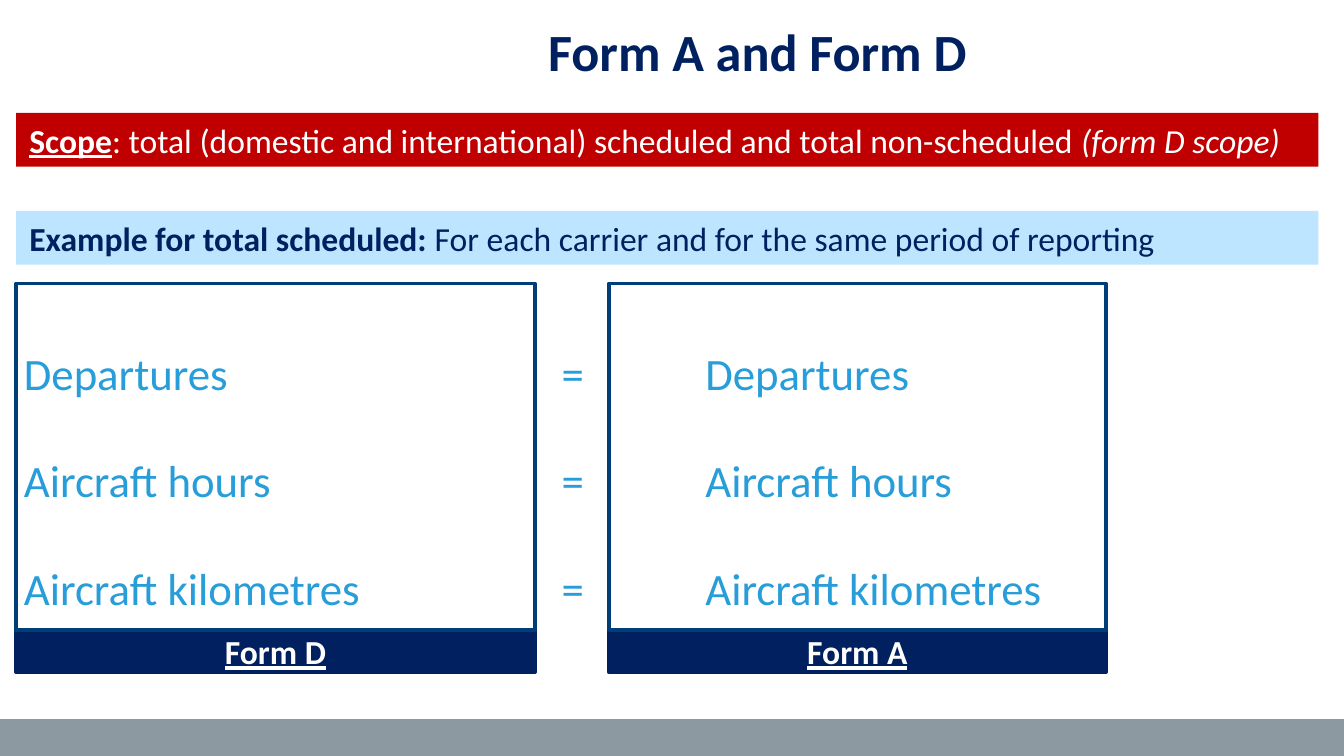
import dataclasses
import typing

import lxml.etree
import pptx
import pptx.dml.color
import pptx.enum.shapes
import pptx.enum.text
import pptx.oxml.ns
import pptx.util

Inches = pptx.util.Inches
Pt = pptx.util.Pt
ALIGN = pptx.enum.text.PP_ALIGN
ANCHOR = pptx.enum.text.MSO_ANCHOR
COLOURS = {
    "navy": "002060",
    "red": "C00000",
    "pale": "BEE5FF",
    "sky": "279DD9",
    "frame": "003E79",
    "grey": "8C99A1",
    "white": "FFFFFF",
}
HEADING = {"bold": True, "underline": True}


@dataclasses.dataclass
class Box:
    left: float
    top: float
    width: float
    height: float
    fill: typing.Optional[str] = None
    line: typing.Optional[str] = None
    line_width: float = 0


@dataclasses.dataclass
class Phrase:
    text: str
    style: dict = dataclasses.field(default_factory=dict)


@dataclasses.dataclass
class Form:
    name: str
    left: float
    width: float


def colour(name: str) -> pptx.dml.color.RGBColor:
    return pptx.dml.color.RGBColor.from_string(COLOURS[name])


def place(box: Box) -> tuple:
    return tuple(Inches(n) for n in (box.left, box.top, box.width, box.height))


def draw_box(slide, box: Box):
    rectangle = slide.shapes.add_shape(
        pptx.enum.shapes.MSO_SHAPE.RECTANGLE, *place(box))
    rectangle.shadow.inherit = False
    if box.fill:
        rectangle.fill.solid()
        rectangle.fill.fore_color.rgb = colour(box.fill)
    else:
        rectangle.fill.background()
    if box.line:
        rectangle.line.color.rgb = colour(box.line)
        rectangle.line.width = Pt(box.line_width)
    else:
        rectangle.line.fill.background()
    return rectangle


def write(paragraph, phrases: list, size: float, ink: str) -> None:
    for phrase in phrases:
        run = paragraph.add_run()
        run.text = phrase.text
        style = {"name": "Calibri", "size": Pt(size), **phrase.style}
        for attribute, value in style.items():
            setattr(run.font, attribute, value)
        run.font.color.rgb = colour(ink)


def set_frame(shape, anchor):
    frame = shape.text_frame
    frame.word_wrap = True
    frame.vertical_anchor = anchor
    return frame


def add_tabs(paragraph, stops: list) -> None:
    qn = pptx.oxml.ns.qn
    tab_list = lxml.etree.SubElement(
        paragraph._p.get_or_add_pPr(), qn("a:tabLst"))
    for stop in stops:
        lxml.etree.SubElement(
            tab_list, qn("a:tab"), pos=str(Inches(stop)), algn="l")


def draw_measures(slide, measures: list) -> None:
    box = Box(0.08, 2.12, 9.72, 3.33)
    frame = set_frame(slide.shapes.add_textbox(*place(box)), ANCHOR.TOP)
    for index, measure in enumerate(measures):
        paragraph = frame.add_paragraph() if index else frame.paragraphs[0]
        add_tabs(paragraph, [4, 5.07])
        paragraph.line_spacing = 2.0
        write(paragraph, [Phrase(f"{measure}\t=\t{measure}")], 24, "sky")


def draw_banner(slide, top: float, fill: str, ink: str, phrases: list) -> None:
    banner = draw_box(slide, Box(0.12, top, 9.69, 0.4, fill))
    paragraph = set_frame(banner, ANCHOR.TOP).paragraphs[0]
    paragraph.alignment = ALIGN.LEFT
    write(paragraph, phrases, 18, ink)


def draw_form(slide, form: Form) -> None:
    label = draw_box(
        slide, Box(form.left, 4.69, form.width, 0.31, "navy", "navy", 2.25))
    paragraph = set_frame(label, ANCHOR.MIDDLE).paragraphs[0]
    paragraph.alignment = ALIGN.CENTER
    write(paragraph, [Phrase(form.name, HEADING)], 18, "white")
    draw_box(
        slide, Box(form.left, 2.11, form.width, 2.58, None, "frame", 2))


def main() -> None:
    """Build the slide that compares Form A with Form D."""
    deck = pptx.Presentation()
    deck.slide_width = Inches(10)
    deck.slide_height = deck.slide_width * 9 // 16
    slide = deck.slides.add_slide(deck.slide_layouts[6])
    draw_box(slide, Box(0, 5.35, 10, 0.28, "grey"))
    draw_measures(slide, ["Departures", "Aircraft hours", "Aircraft kilometres"])
    title = slide.shapes.add_textbox(*place(Box(3.98, -0.04, 6.02, 0.84)))
    write(set_frame(title, ANCHOR.MIDDLE).paragraphs[0],
          [Phrase("Form A and Form D", {"bold": True})], 28, "navy")
    draw_banner(slide, 0.84, "red", "white", [
        Phrase("Scope", HEADING),
        Phrase(": total (domestic and international) scheduled "
               "and total non-scheduled "),
        Phrase("(form D scope)", {"italic": True}),
    ])
    draw_banner(slide, 1.57, "pale", "navy", [
        Phrase("Example for total scheduled:", {"bold": True}),
        Phrase(" For each carrier and for the same period of reporting"),
    ])
    for form in (Form("Form D", 0.12, 3.86), Form("Form A", 4.53, 3.7)):
        draw_form(slide, form)
    deck.save("out.pptx")


if __name__ == "__main__":
    main()
